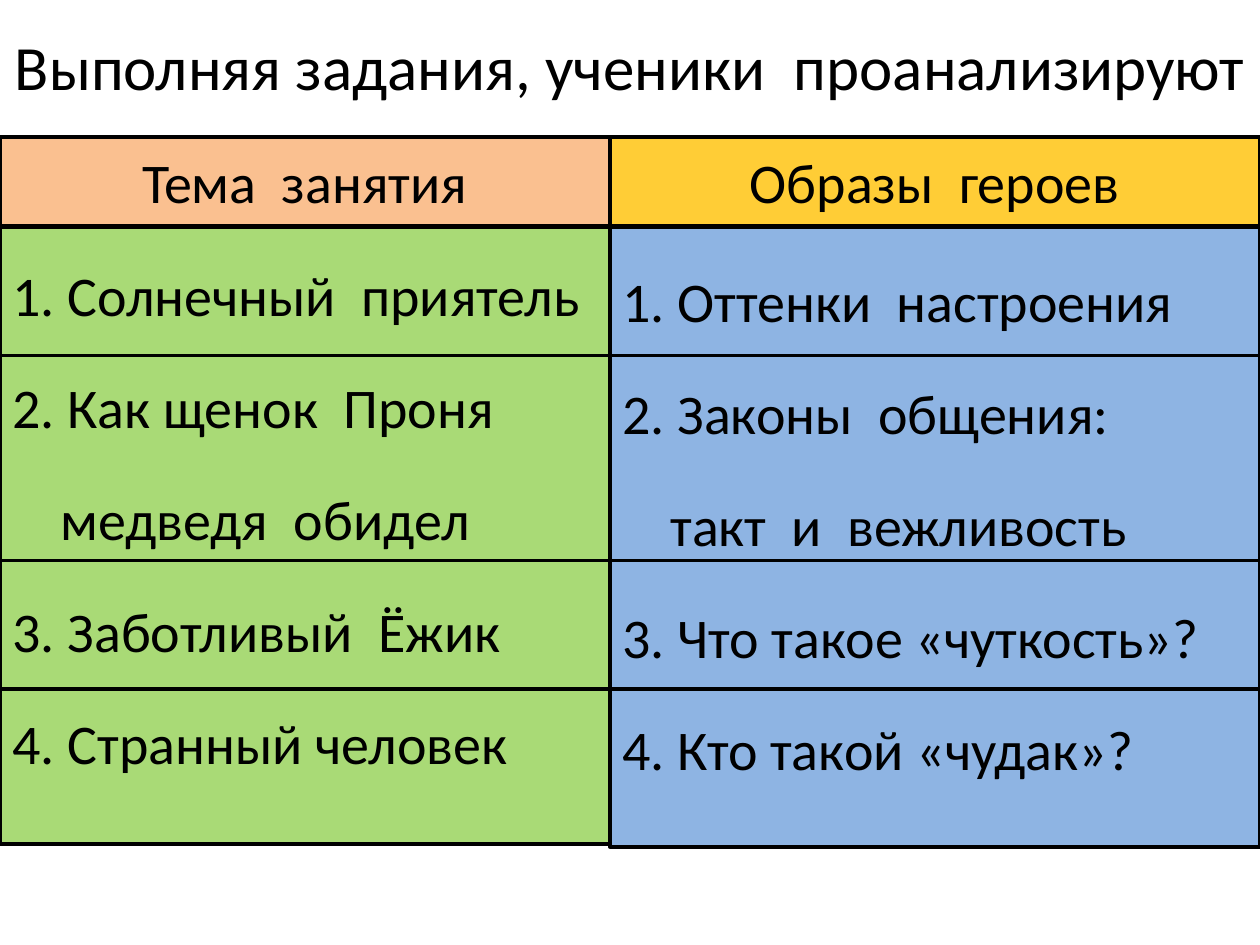
"""Build a slide pairing lesson topics with the character images pupils analyse."""
from lxml import etree
from pptx import Presentation
from pptx import util as u
from pptx.dml import color
from pptx.enum import shapes, text
from pptx.oxml import ns


def paint(shape, fill, opacity, line_width):
    """Fill a shape with a hex colour and outline it in black."""
    shape.fill.solid()
    shape.fill.fore_color.rgb = color.RGBColor.from_string(fill)
    if opacity < 100:
        tint = shape.fill._xPr.find(".//" + ns.qn("a:srgbClr"))
        etree.SubElement(tint, ns.qn("a:alpha")).set("val", str(opacity * 1000))
    shape.line.color.rgb = color.RGBColor.from_string("000000")
    shape.line.width = u.Pt(line_width)


def write(shape, lines, size, align, anchor, hanging=0, spacing=1):
    """Write black Calibri paragraphs without bullets."""
    frame = shape.text_frame
    frame.text = "\n".join(lines)
    frame.word_wrap = True
    frame.auto_size = text.MSO_AUTO_SIZE.NONE
    frame.vertical_anchor = anchor
    for number, paragraph in enumerate(frame.paragraphs):
        properties = paragraph._p.get_or_add_pPr()
        properties.set("marL", str(u.Inches(hanging)))
        properties.set("indent", str(-u.Inches(hanging)))
        etree.SubElement(properties, ns.qn("a:buNone"))
        paragraph.alignment = align
        paragraph.line_spacing = spacing
        paragraph.space_before = u.Pt(0.2 * size if number else 0)
        paragraph.font.size = u.Pt(size)
        paragraph.font.name = "Calibri"
        paragraph.font.color.rgb = color.RGBColor.from_string("000000")


deck = Presentation()
deck.slide_width, deck.slide_height = u.Inches(10), u.Inches(7.5)
slide = deck.slides.add_slide(deck.slide_layouts[3])
title, topics, images = slide.placeholders

title.left, title.top, title.width, title.height = map(u.Inches, (0, 0.16, 10, 0.71))
write(title, ["Выполняя задания, ученики  проанализируют"], 36,
      text.PP_ALIGN.CENTER, text.MSO_ANCHOR.MIDDLE)

split = 4.84
columns = [
    (topics, 0, split, 1.75, 4.95, "92D050", 78, 2.5, "Тема  занятия", "FAC090", 100,
     ["1. Солнечный  приятель", "2. Как щенок  Проня", "\tмедведя  обидел",
      "3. Заботливый  Ёжик", "4. Странный человек"]),
    (images, split, 10 - split, 1.8, 4.92, "8EB4E3", 100, 2.25, "Образы  героев", "FFC000", 79,
     ["1. Оттенки  настроения", "2. Законы  общения:", "\tтакт  и  вежливость",
      "3. Что такое «чуткость»?", "4. Кто такой «чудак»?"]),
]
for (body, left, width, top, height, fill, opacity, border,
     heading, heading_fill, heading_opacity, lines) in columns:
    body.left, body.top, body.width, body.height = map(u.Inches, (left, top, width, height))
    paint(body, fill, opacity, border)
    write(body, lines, 32, text.PP_ALIGN.LEFT, text.MSO_ANCHOR.TOP, 0.38, 1.5)

    header = slide.shapes.add_shape(
        shapes.MSO_SHAPE.RECTANGLE, *map(u.Inches, (left, 1.09, width, 0.7)))
    header.shadow.inherit = False
    paint(header, heading_fill, heading_opacity, 2.25)
    write(header, [heading], 32, text.PP_ALIGN.CENTER, text.MSO_ANCHOR.MIDDLE, 0.38)

for row_top in (4.45, 1.8):
    row = slide.shapes.add_shape(
        shapes.MSO_SHAPE.RECTANGLE, *map(u.Inches, (0, row_top, 10, 1.02)))
    row.shadow.inherit = False
    row.fill.background()
    row.line.color.rgb = color.RGBColor.from_string("000000")
    row.line.width = u.Pt(2)

deck.save("out.pptx")
